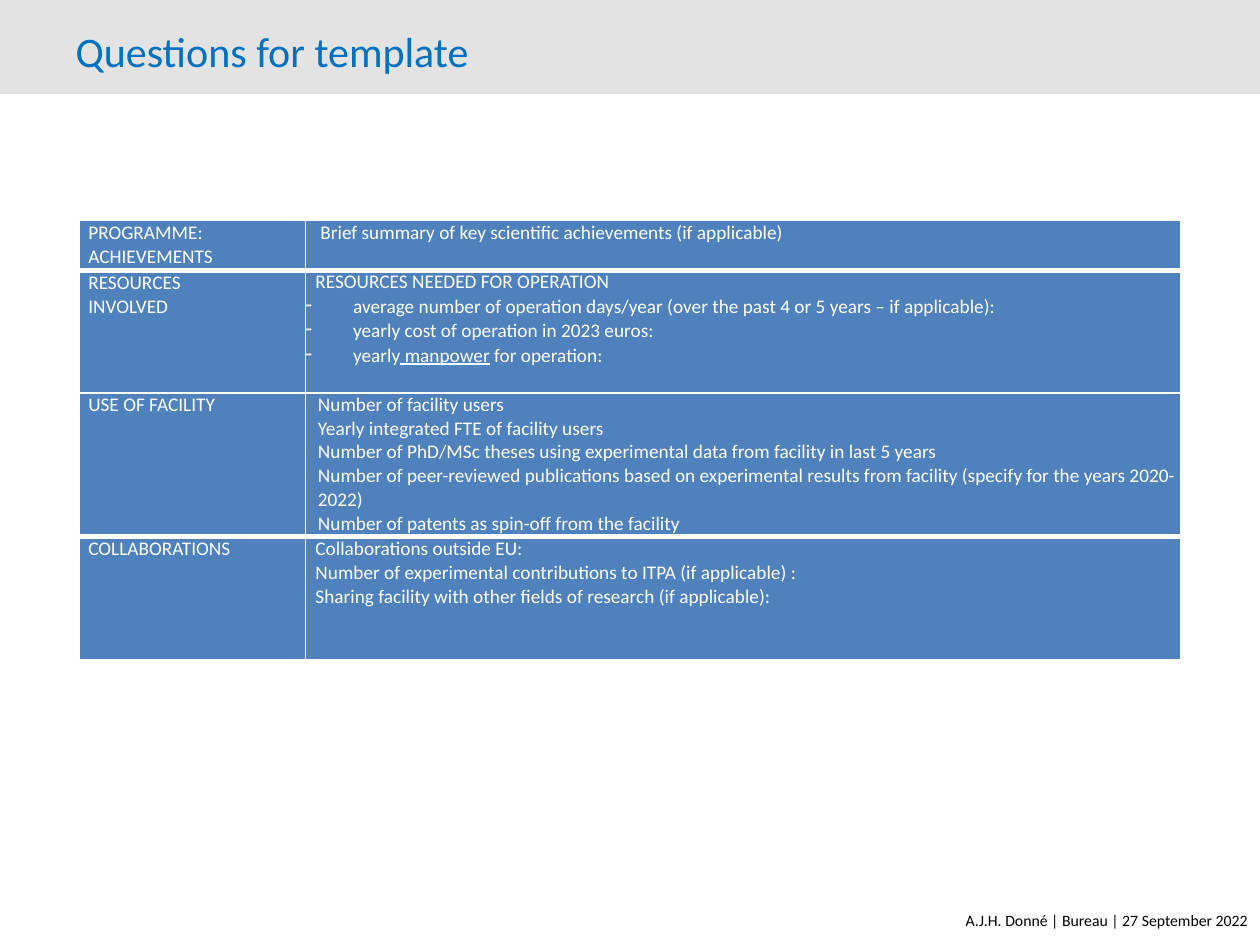
from lxml.etree import SubElement as Sub
from pptx import Presentation
from pptx.dml.color import RGBColor
from pptx.enum.shapes import MSO_SHAPE as Shape
from pptx.enum.text import MSO_ANCHOR as Anchor, PP_ALIGN as Align
from pptx.oxml.ns import qn
from pptx.util import Cm, Pt

WHITE = RGBColor(0xFF, 0xFF, 0xFF)
BLACK = RGBColor(0, 0, 0)
GREY = RGBColor(0xE3, 0xE3, 0xE3)
BLUE = RGBColor(0x00, 0x70, 0xC0)
STEEL = RGBColor(0x4F, 0x81, 0xBD)

TITLE = "Questions for template"
FOOTER = "A.J.H. Donné | Bureau | 27 September 2022"
ROWS = [
    dict(label="PROGRAMME: ACHIEVEMENTS", left=0.3, gap=0, height=1, lines=[
        "Brief summary of key scientific achievements (if applicable)"]),
    dict(label="RESOURCES INVOLVED", left=0.2, gap=0.4, height=2.47, lines=[
        "RESOURCES NEEDED FOR OPERATION"], points=[
        "average number of operation days/year (over the past 4 or 5 years – if applicable):",
        "yearly cost of operation in 2023 euros:",
        ("yearly", " manpower", " for operation:")]),
    dict(label="USE OF FACILITY", left=0.25, gap=0, height=2.9, lines=[
        "Number of facility users",
        "Yearly integrated FTE of facility users",
        "Number of PhD/MSc theses using experimental data from facility in last 5 years",
        "Number of peer-reviewed publications based on experimental results from facility "
        "(specify for the years 2020-2022)",
        "Number of patents as spin-off from the facility"]),
    dict(label="COLLABORATIONS", left=0.2, gap=0.3, height=2.47, lines=[
        "Collaborations outside EU:",
        "Number of experimental contributions to ITPA (if applicable) :",
        "Sharing facility with other fields of research (if applicable):"]),
]
WIDTHS = [4.56, 17.64]
THICK = {(0, "B"), (1, "T"), (2, "B"), (3, "T")}


def write(frame, text, size=11, color=WHITE, align=Align.LEFT, left=0,
          hang=0, bullet=None, spacing=None, before=0, first=True):
    para = frame.paragraphs[0] if first else frame.add_paragraph()
    props = para._p.get_or_add_pPr()
    props.set("marL", str(Cm(left)))
    props.set("indent", str(-Cm(hang)))
    if bullet:
        Sub(props, qn("a:buChar"), char=bullet)
    else:
        Sub(props, qn("a:buNone"))
    para.alignment = align
    para.space_before = Pt(0 if first else before)
    if spacing:
        para.line_spacing = spacing
    parts = (text,) if isinstance(text, str) else text
    for i, part in enumerate(parts):
        run = para.add_run()
        run.text = part
        font = run.font
        font.name, font.size, font.color.rgb = "Calibri", Pt(size), color
        if i == 1:
            font.underline = True


def style(cell, row):
    cell.margin_left = cell.margin_right = cell.margin_top = cell.margin_bottom = 0
    props = cell._tc.get_or_add_tcPr()
    for side in "LRTB":
        width = Pt(3 if (row, side) in THICK else 1)
        line = Sub(props, qn(f"a:ln{side}"), w=str(width))
        fill = Sub(line, qn("a:solidFill"))
        Sub(fill, qn("a:srgbClr"), val=str(WHITE))
    cell.fill.solid()
    cell.fill.fore_color.rgb = STEEL


def main():
    deck = Presentation()
    deck.slide_width, deck.slide_height = Cm(25.4), Cm(19.05)
    slide = deck.slides.add_slide(deck.slide_layouts[5])
    shapes = slide.shapes

    bar = shapes.add_shape(Shape.RECTANGLE, 0, 0, deck.slide_width, Cm(1.9))
    bar.shadow.inherit = False
    bar.fill.solid()
    bar.fill.fore_color.rgb = GREY
    bar.line.fill.background()
    shapes._spTree.insert(2, bar._element)

    title = shapes.title
    title.left, title.top, title.width, title.height = Cm(1.27), Cm(0.33), Cm(20.95), Cm(1.27)
    title.text_frame.vertical_anchor = Anchor.MIDDLE
    write(title.text_frame, TITLE, size=24, color=BLUE, spacing=Pt(32))

    foot = shapes.add_textbox(Cm(1.3), Cm(18.19), Cm(24.1), Cm(0.74)).text_frame
    foot.word_wrap = True
    foot.vertical_anchor = Anchor.MIDDLE
    write(foot, FOOTER, size=9, color=BLACK, align=Align.RIGHT)

    height = sum(item["height"] for item in ROWS)
    table = shapes.add_table(len(ROWS), 2, Cm(1.6), Cm(4.45),
                             Cm(sum(WIDTHS)), Cm(height)).table
    table.first_row = table.horz_banding = False
    for col, width in zip(table.columns, WIDTHS):
        col.width = Cm(width)
    for r, item in enumerate(ROWS):
        table.rows[r].height = Cm(item["height"])
        label, body = table.cell(r, 0), table.cell(r, 1)
        style(label, r)
        style(body, r)
        label.margin_right = Cm(1.3)
        write(label.text_frame, item["label"], left=0.18, spacing=1.02)
        for i, line in enumerate(item["lines"]):
            write(body.text_frame, line, left=item["left"], before=item["gap"], first=i == 0)
        for point in item.get("points", []):
            write(body.text_frame, point, left=0.96, hang=0.96, bullet="-",
                  before=item["gap"], first=False)
    deck.save("out.pptx")


if __name__ == "__main__":
    main()
